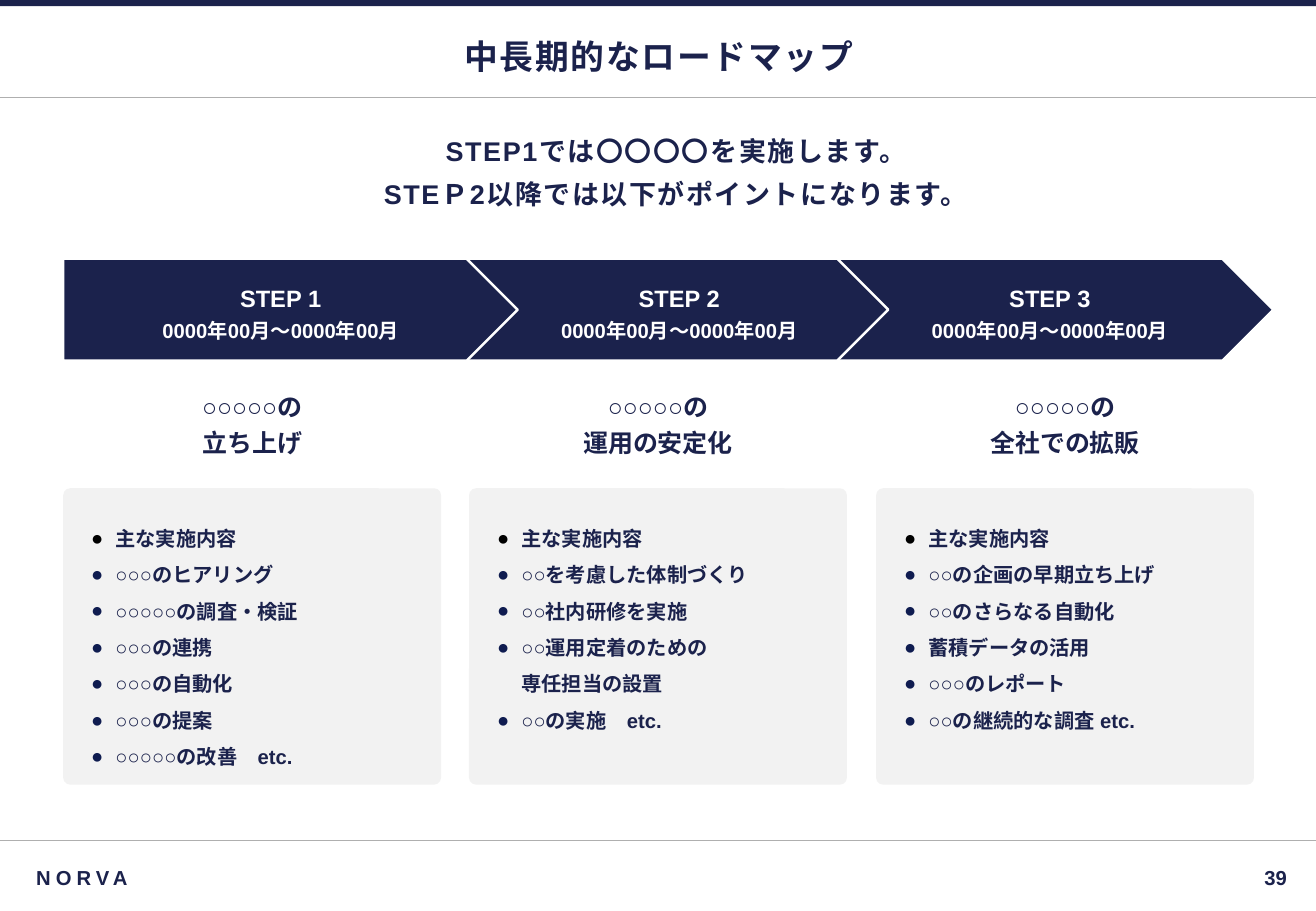
"""Build the medium- and long-term roadmap slide."""
import copy
import dataclasses

import pptx
import pptx.dml.color
import pptx.enum.shapes
import pptx.enum.text
import pptx.oxml
import pptx.oxml.ns
import pptx.util

SHAPE = pptx.enum.shapes.MSO_SHAPE
ALIGN = pptx.enum.text.PP_ALIGN
ANCHOR = pptx.enum.text.MSO_ANCHOR
PT = pptx.util.Pt
QN = pptx.oxml.ns.qn


@dataclasses.dataclass(frozen=True)
class Theme:
    navy: str = "1B224C"
    bullet: str = "0F1C50"
    black: str = "000000"
    white: str = "FFFFFF"
    panel: str = "F2F2F2"
    rule: str = "AFAFAF"
    font: str = "Arial"
    title_font: str = "Noto Sans CJK JP"
    title: float = 20
    lead: float = 16
    goal: float = 14.8
    step: float = 14
    body: float = 12


class Deck:
    """Draw styled elements on the current slide."""

    PX = 9144

    def __init__(self, width, height, theme):
        self.theme = theme
        self.prs = pptx.Presentation()
        self.prs.slide_width, self.prs.slide_height = self.emu(width, height)
        self.s = self.prs.slides.add_slide(self.prs.slide_layouts[6])

    def emu(self, *lengths):
        return [pptx.util.Emu(n * self.PX) for n in lengths]

    def rgb(self, value):
        return pptx.dml.color.RGBColor.from_string(value)

    def rule(self, y, width):
        ln = self.s.shapes.add_connector(
            pptx.enum.shapes.MSO_CONNECTOR.STRAIGHT, *self.emu(0, y, width, y))
        ln.line.color.rgb = self.rgb(self.theme.rule)
        ln.line.width = PT(0.75)
        pptx.oxml.ns.qn
        ln._element.spPr.append(pptx.oxml.parse_xml(
            "<a:effectLst %s/>" % pptx.oxml.ns.nsdecls("a")))

    def shape(self, kind, box, fill, line=None, adj=None):
        sp = self.s.shapes.add_shape(kind, *self.emu(*box))
        sp.shadow.inherit = False
        sp.fill.solid()
        sp.fill.fore_color.rgb = self.rgb(fill)
        if line:
            sp.line.color.rgb = self.rgb(line)
            sp.line.width = PT(1.5)
        else:
            sp.line.fill.background()
        if adj is not None:
            sp.adjustments[0] = adj

    def text(self, box, lines, size, color=None, font=None, align=ALIGN.CENTER,
             anchor=ANCHOR.MIDDLE, inset=4, track=0, indent=None, bullets=False,
             sizes=None, formats=None, later=None):
        tf = self.s.shapes.add_textbox(*self.emu(*box)).text_frame
        left, edge = self.emu(inset, 4)
        frame = {"word_wrap": True, "vertical_anchor": anchor, "margin_left": left,
                 "margin_right": left, "margin_top": edge, "margin_bottom": edge}
        for name, value in frame.items():
            setattr(tf, name, value)
        for i, line in enumerate(lines):
            p = tf.add_paragraph() if i else tf.paragraphs[0]
            p.text = line
            style = {"alignment": align, **(formats or {}), **(later or {} if i else {})}
            for name, value in style.items():
                setattr(p, name, value)
            pPr = p._p.get_or_add_pPr()
            if indent:
                margin, first = self.emu(*indent)
                pPr.set("marL", str(margin))
                pPr.set("indent", str(first))
            if bullets:
                self.bullet(pPr, self.theme.bullet if i else self.theme.black)
            for r in p.runs:
                self.run(r, sizes[i] if sizes else size, color or self.theme.navy,
                         font or self.theme.font, track)
            for br in p._p.findall(QN("a:br")):
                br.append(copy.deepcopy(p.runs[0]._r.rPr))

    def run(self, r, size, color, font, track):
        for name, value in {"name": font, "size": PT(size), "bold": True}.items():
            setattr(r.font, name, value)
        r.font.color.rgb = self.rgb(color)
        rPr = r._r.get_or_add_rPr()
        rPr.append(pptx.oxml.parse_xml('<a:ea %s typeface="%s"/>' % (
            pptx.oxml.ns.nsdecls("a"), font)))
        if track:
            rPr.set("spc", str(track * 100))

    def bullet(self, pPr, color):
        ns = pptx.oxml.ns.nsdecls("a")
        for xml in ('<a:buClr %s><a:srgbClr val="%s"/></a:buClr>' % (ns, color),
                    '<a:buFont %s typeface="%s"/>' % (ns, self.theme.font),
                    '<a:buChar %s char="●"/>' % ns):
            pPr.append(pptx.oxml.parse_xml(xml))


STEPS = [
    (52, 109, "立ち上げ",
     ["○○○のヒアリング", "○○○○○の調査・検証", "○○○の連携", "○○○の自動化",
      "○○○の提案", "○○○○○の改善　etc."]),
    (357, 437, "運用の安定化",
     ["○○を考慮した体制づくり", "○○社内研修を実施",
      "○○運用定着のための\n専任担当の設置", "○○の実施　etc."]),
    (674, 742, "全社での拡販",
     ["○○の企画の早期立ち上げ", "○○のさらなる自動化", "蓄積データの活用",
      "○○○のレポート", "○○の継続的な調査 etc."]),
]


def main():
    theme = Theme()
    deck = Deck(1083, 750, theme)
    for y in (692, 80):
        deck.rule(y, 1083)
    deck.shape(SHAPE.RECTANGLE, (0, 0, 1083, 5), theme.navy)
    deck.text((52, 107, 984, 83),
              ["STEP1では〇〇〇〇を実施します。", "STEＰ2以降では以下がポイントになります。"],
              theme.lead, anchor=ANCHOR.TOP, track=1, indent=(50, -25),
              formats={"space_after": PT(6)})
    deck.text((50, 21, 984, 51), ["中長期的なロードマップ"], theme.title,
              font=theme.title_font, track=1)
    deck.text((20, 707, 866, 31), ["NORVA"], theme.body, align=ALIGN.LEFT,
              inset=10, track=3)
    deck.text((906, 707, 157, 31), ["39"], theme.body, align=ALIGN.RIGHT)

    for arrow_x, *_ in reversed(STEPS):
        deck.shape(SHAPE.PENTAGON, (arrow_x, 213, 374, 84), theme.navy, theme.white, 0.5)
    spaced = {"space_before": PT(3.7), "space_after": PT(3.7)}
    for i, (_, label_x, goal, tasks) in enumerate(STEPS):
        x = 52 + i * 669 // 2
        deck.shape(SHAPE.ROUNDED_RECTANGLE, (x, 402, 311, 244), theme.panel, adj=0.024)
        deck.text((x + 19, 419, 272, 209), ["主な実施内容", *tasks], theme.body,
                  align=ALIGN.LEFT, anchor=ANCHOR.TOP, indent=(20, -20), bullets=True,
                  formats={"line_spacing": 1.5})
        deck.text((label_x, 227, 244, 62), [f"STEP {i + 1}", "0000年00月～0000年00月"],
                  theme.step, theme.white, sizes=(theme.step, theme.body), later=spaced)
        deck.text((x, 316, 311, 67), ["○○○○○の", goal], theme.goal, later=spaced)
    deck.prs.save("out.pptx")


if __name__ == "__main__":
    main()
